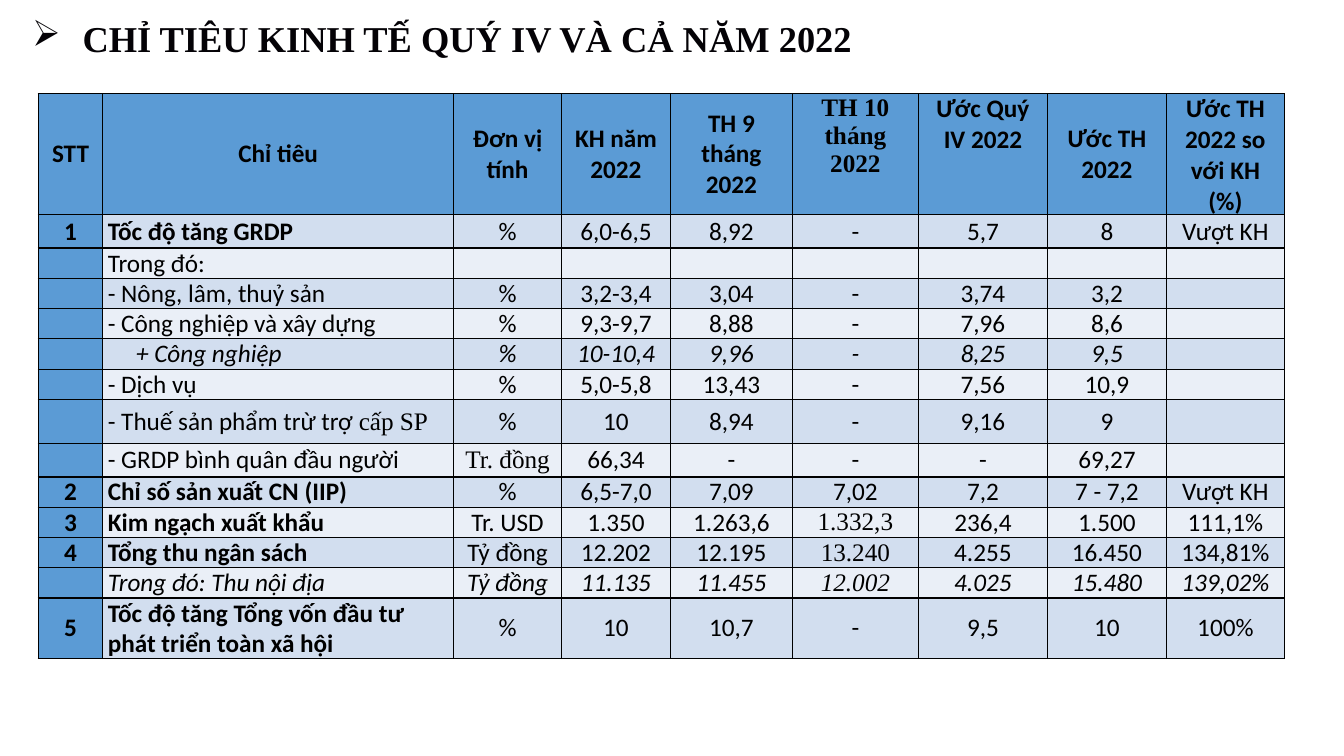
from lxml.etree import SubElement
from pptx import Presentation
from pptx.dml.color import RGBColor
from pptx.enum.text import MSO_ANCHOR, MSO_AUTO_SIZE, PP_ALIGN
from pptx.oxml.ns import qn
from pptx.util import Inches, Pt

COLORS = {
    "title": "040206",
    "text": "000000",
    "border": "000000",
    "header": "5B9BD5",
    "odd": "D2DEEF",
    "even": "EAEFF7",
}
SERIF = "Times New Roman"
TITLE = "CHỈ TIÊU KINH TẾ QUÝ IV VÀ CẢ NĂM 2022"
COLUMN_WIDTHS = [0.64, 3.48, 1.07, 1.08, 1.21, 1.25, 1.28, 1.18, 1.17]
ROW_HEIGHTS = [1.2, 0.33, 0.3, 0.3, 0.3, 0.3, 0.3, 0.44, 0.33, 0.3, 0.3, 0.3, 0.3, 0.6]
ROWS = [
    ["STT", "Chỉ tiêu", "Đơn vị tính", "KH năm 2022", "TH 9 tháng 2022",
     "TH 10 tháng 2022", "Ước Quý IV 2022", "Ước TH 2022", "Ước TH 2022 so với KH (%)"],
    ["1", "Tốc độ tăng GRDP", "%", "6,0-6,5", "8,92", "-", "5,7", "8", "Vượt KH"],
    ["", "Trong đó:", "", "", "", "", "", "", ""],
    ["", "- Nông, lâm, thuỷ sản", "%", "3,2-3,4", "3,04", "-", "3,74", "3,2", ""],
    ["", "- Công nghiệp và xây dựng", "%", "9,3-9,7", "8,88", "-", "7,96", "8,6", ""],
    ["", "+ Công nghiệp", "%", "10-10,4", "9,96", "-", "8,25", "9,5", ""],
    ["", "- Dịch vụ", "%", "5,0-5,8", "13,43", "-", "7,56", "10,9", ""],
    ["", "- Thuế sản phẩm trừ trợ ", "%", "10", "8,94", "-", "9,16", "9", ""],
    ["", "- GRDP bình quân đầu người", "Tr. đồng", "66,34", "-", "-", "-", "69,27", ""],
    ["2", "Chỉ số sản xuất CN (IIP)", "%", "6,5-7,0", "7,09", "7,02", "7,2", "7 - 7,2", "Vượt KH"],
    ["3", "Kim ngạch xuất khẩu", "Tr. USD", "1.350", "1.263,6", "1.332,3", "236,4", "1.500", "111,1%"],
    ["4", "Tổng thu ngân sách", "Tỷ đồng", "12.202", "12.195", "13.240", "4.255", "16.450", "134,81%"],
    ["", "Trong đó: Thu nội địa", "Tỷ đồng", "11.135", "11.455", "12.002", "4.025", "15.480", "139,02%"],
    ["5", "Tốc độ tăng Tổng vốn đầu tư phát triển toàn xã hội", "%", "10", "10,7", "-", "9,5", "10", "100%"],
]
ITALIC_ROWS = {5, 12}
SERIF_CELLS = {(0, 5), (8, 2), (10, 5), (11, 5), (12, 5)}
TOP_CELLS = {(0, 5), (0, 6)}
INDENTED_CELL = (5, 1)
SUBSIDY_CELL = (7, 1)


def write(paragraph, text, font="Calibri", size=18, color="text", bold=False, italic=False):
    run = paragraph.add_run()
    run.text = text
    run.font.name = font
    run.font.size = Pt(size)
    run.font.bold = bold
    run.font.italic = italic
    run.font.color.rgb = RGBColor.from_string(COLORS[color])


def indent(paragraph, left, first=0):
    properties = paragraph._p.get_or_add_pPr()
    properties.set("marL", str(Inches(left)))
    properties.set("indent", str(Inches(first)))
    return properties


class IndicatorSlide:
    """Slide of yearly economic indicators with its shared style."""

    def __init__(self, presentation):
        self.slide = presentation.slides.add_slide(presentation.slide_layouts[6])

    def add_title(self, text):
        shape = self.slide.shapes.add_textbox(Inches(0.22), Inches(0.11), Inches(12.78), Inches(0.54))
        shape.text_frame.word_wrap = True
        shape.text_frame.auto_size = MSO_AUTO_SIZE.SHAPE_TO_FIT_TEXT
        paragraph = shape.text_frame.paragraphs[0]
        properties = indent(paragraph, 0.5, -0.5)
        SubElement(properties, qn("a:buChar"), char="➢")
        write(paragraph, text, font=SERIF, size=26, color="title", bold=True)

    def add_table(self, rows):
        frame = self.slide.shapes.add_table(
            len(rows), len(COLUMN_WIDTHS), Inches(0.38), Inches(0.93),
            Inches(sum(COLUMN_WIDTHS)), Inches(sum(ROW_HEIGHTS)))
        table = frame.table
        for column, width in zip(table.columns, COLUMN_WIDTHS):
            column.width = Inches(width)
        for row, height in zip(table.rows, ROW_HEIGHTS):
            row.height = Inches(height)
        for row_index, values in enumerate(rows):
            for column_index, text in enumerate(values):
                self.fill_cell(table, (row_index, column_index), text, numbered=bool(values[0]))

    def fill_cell(self, table, position, text, numbered):
        row, column = position
        cell = table.cell(row, column)
        cell.margin_left = cell.margin_right = Inches(0.05)
        cell.margin_top = cell.margin_bottom = 0
        cell.vertical_anchor = MSO_ANCHOR.TOP if position in TOP_CELLS else MSO_ANCHOR.MIDDLE
        self.add_borders(cell)
        band = "odd" if row % 2 else "even"
        cell.fill.solid()
        cell.fill.fore_color.rgb = RGBColor.from_string(
            COLORS["header" if row == 0 or column == 0 else band])
        paragraph = cell.text_frame.paragraphs[0]
        if not text:
            paragraph.font.size = Pt(18)
            return
        paragraph.alignment = PP_ALIGN.LEFT if column == 1 and row else PP_ALIGN.CENTER
        if position in TOP_CELLS:
            paragraph.space_before = Pt(12)
        if position == INDENTED_CELL:
            indent(paragraph, 0.28)
        write(paragraph, text, font=SERIF if position in SERIF_CELLS else "Calibri",
              bold=row == 0 or (numbered and column < 2), italic=row in ITALIC_ROWS)
        if position == SUBSIDY_CELL:
            write(paragraph, "cấp SP", font=SERIF)

    def add_borders(self, cell):
        properties = cell._tc.get_or_add_tcPr()
        for side in ("lnL", "lnR", "lnT", "lnB"):
            line = SubElement(properties, qn(f"a:{side}"), w=str(Pt(1)))
            fill = SubElement(line, qn("a:solidFill"))
            SubElement(fill, qn("a:srgbClr"), val=COLORS["border"])


def main():
    presentation = Presentation()
    presentation.slide_width = Inches(13.33)
    presentation.slide_height = Inches(7.5)
    slide = IndicatorSlide(presentation)
    slide.add_title(TITLE)
    slide.add_table(ROWS)
    presentation.save("out.pptx")


if __name__ == "__main__":
    main()
